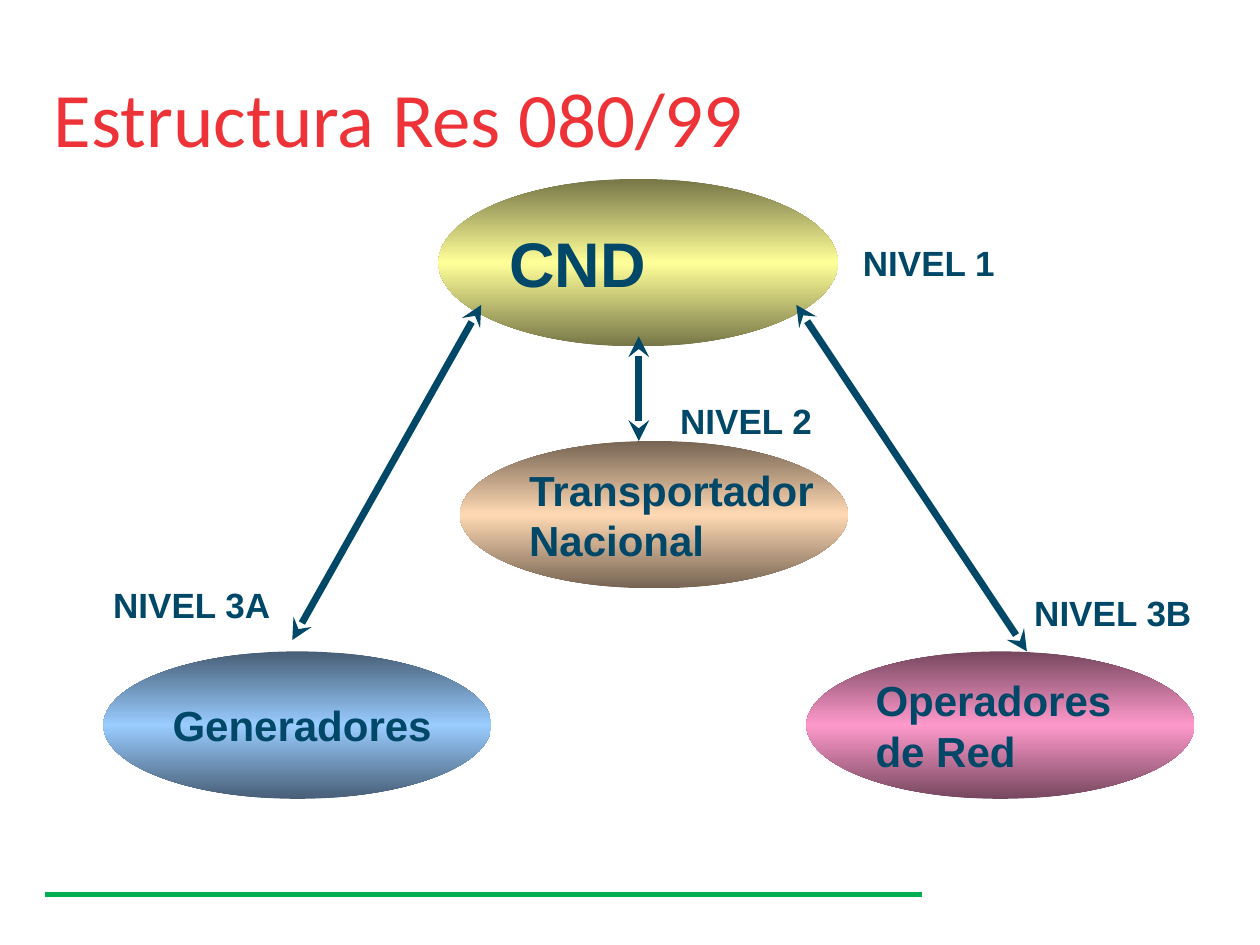
"""Build the slide showing the control levels of Res 080/99."""
from copy import deepcopy
from dataclasses import dataclass

from pptx import Presentation
from pptx.dml.color import RGBColor
from pptx.enum.shapes import MSO_CONNECTOR, MSO_SHAPE
from pptx.enum.text import MSO_ANCHOR, MSO_AUTO_SIZE, PP_ALIGN
from pptx.oxml.ns import qn
from pptx.util import Inches, Pt
from lxml.etree import SubElement


@dataclass(frozen=True)
class Theme:
    """Colours, fonts and type sizes of the slide."""
    ink: str = "004768"
    title: str = "EE3338"
    rule: str = "00B050"
    yellow: tuple = ("767647", "FFFF99")
    orange: tuple = ("766453", "FFD9B3")
    pink: tuple = ("76475E", "FF99CC")
    blue: tuple = ("475E76", "99CCFF")
    body_font: str = "Arial"
    title_font: str = "Calibri"
    title_size: int = 44
    center_size: int = 36
    agent_size: int = 24
    level_size: int = 20
    rule_width: int = 3
    arrow_width: int = 4


class SlideBuilder:
    """Add the styled elements to one slide."""

    def __init__(self, slide, theme):
        """Keep the slide and its theme."""
        self.slide = slide
        self.theme = theme

    def set_text(self, shape, text, size, color, font, bold=True):
        """Set left-aligned, vertically centred text in a shape."""
        text_frame = shape.text_frame
        text_frame.text = text
        text_frame.word_wrap = False
        text_frame.vertical_anchor = MSO_ANCHOR.MIDDLE
        for paragraph in text_frame.paragraphs:
            paragraph.alignment = PP_ALIGN.LEFT
            for run in paragraph.runs:
                run.font.name = font
                run.font.size = Pt(size)
                run.font.bold = bold
                run.font.color.rgb = RGBColor.from_string(color)

    def title(self, text, left, top, width, height):
        """Add the slide title."""
        shape = self.slide.shapes.add_textbox(
            Inches(left), Inches(top), Inches(width), Inches(height))
        self.set_text(shape, text, self.theme.title_size, self.theme.title,
                      self.theme.title_font, bold=False)
        shape.text_frame.word_wrap = True
        shape.text_frame.paragraphs[0].line_spacing = 0.9

    def ellipse(self, text, left, top, colors, size, width=3.08, height=1.17):
        """Add an ellipse shaded from dark to light to dark."""
        shape = self.slide.shapes.add_shape(
            MSO_SHAPE.OVAL, Inches(left), Inches(top), Inches(width), Inches(height))
        shape.shadow.inherit = False
        shape.line.fill.background()
        shape.fill.gradient()
        shape.fill.gradient_angle = 90
        stop_list = shape._element.spPr.find(".//" + qn("a:gsLst"))
        stop_list.insert(1, deepcopy(stop_list[0]))
        dark, light = colors
        for stop, color, position in zip(
                shape.fill.gradient_stops, (dark, light, dark), (0, 0.5, 1)):
            stop.color.rgb = RGBColor.from_string(color)
            stop.position = position
        self.set_text(shape, text, size, self.theme.ink, self.theme.body_font)

    def level(self, text, left, top, width):
        """Add a level label."""
        shape = self.slide.shapes.add_textbox(
            Inches(left), Inches(top), Inches(width), Inches(0.43))
        self.set_text(shape, text, self.theme.level_size, self.theme.ink,
                      self.theme.body_font)
        shape.text_frame.auto_size = MSO_AUTO_SIZE.SHAPE_TO_FIT_TEXT

    def line(self, start, end, color, width):
        """Add a straight line without a shadow."""
        connector = self.slide.shapes.add_connector(
            MSO_CONNECTOR.STRAIGHT, *map(Inches, start + end))
        connector.line.color.rgb = RGBColor.from_string(color)
        connector.line.width = Pt(width)
        SubElement(connector._element.spPr, qn("a:effectLst"))
        return connector

    def arrow(self, start, end):
        """Add a line with an arrowhead at both ends."""
        connector = self.line(start, end, self.theme.ink, self.theme.arrow_width)
        outline = connector._element.spPr.find(qn("a:ln"))
        for name in ("a:headEnd", "a:tailEnd"):
            SubElement(outline, qn(name), type="stealth")


def main():
    """Build and save the presentation."""
    presentation = Presentation()
    presentation.slide_width = Inches(10)
    presentation.slide_height = Inches(7.5)
    theme = Theme()
    builder = SlideBuilder(
        presentation.slides.add_slide(presentation.slide_layouts[6]), theme)

    builder.line((0.36, 7.1), (7.32, 7.1), theme.rule, theme.rule_width)
    builder.ellipse("CND", 3.48, 1.42, theme.yellow, theme.center_size, 3.17, 1.33)
    for text, left, top, colors in (
            ("Transportador\nNacional", 3.65, 3.5, theme.orange),
            ("Operadores\nde Red", 6.4, 5.17, theme.pink),
            ("Generadores", 0.82, 5.17, theme.blue)):
        builder.ellipse(text, left, top, colors, theme.agent_size)
    for start, end in (
            ((5.07, 2.67), (5.07, 3.5)),
            ((3.82, 2.42), (2.32, 5.08)),
            ((6.32, 2.42), (8.15, 5.17))):
        builder.arrow(start, end)
    for text, left, top, width in (
            ("NIVEL 1", 6.75, 1.87, 1.25),
            ("NIVEL 2", 5.3, 3.12, 1.25),
            ("NIVEL 3A", 0.8, 4.58, 1.45),
            ("NIVEL 3B", 8.11, 4.65, 1.45)):
        builder.level(text, left, top, width)
    builder.title("Estructura Res 080/99", 0.33, 0.29, 9.25, 1.36)

    presentation.save("out.pptx")


if __name__ == "__main__":
    main()
